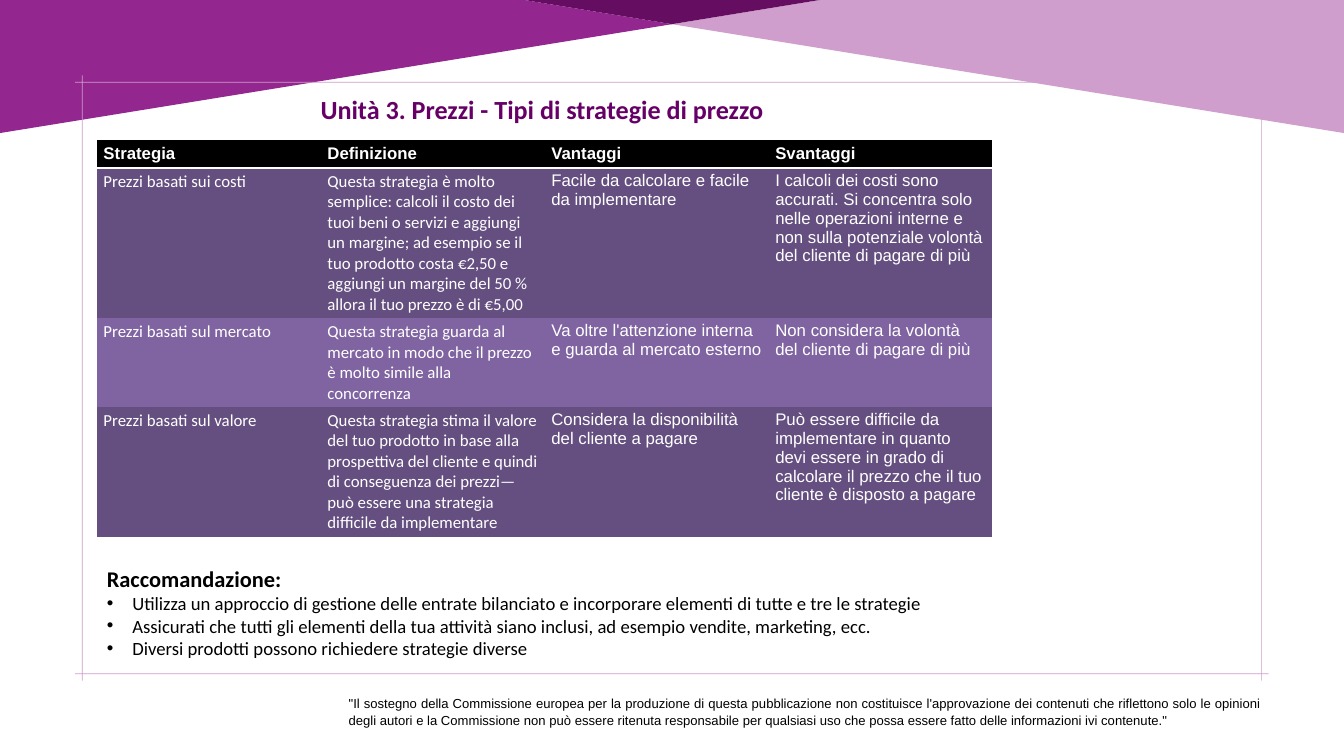
from lxml import etree
from pptx import Presentation
from pptx import util as u
from pptx.dml.color import RGBColor
from pptx.enum import shapes, text
from pptx.oxml import ns

PLUM = RGBColor(0x93, 0x26, 0x8F)
LILAC = RGBColor(0xCF, 0x9E, 0xCC)
DARK = RGBColor(0x64, 0x0D, 0x61)
TITLE = RGBColor(0x66, 0x00, 0x66)
ODD = RGBColor(0x65, 0x4F, 0x80)
EVEN = RGBColor(0x80, 0x64, 0xA2)
BLACK = RGBColor(0, 0, 0)
WHITE = RGBColor(255, 255, 255)

ROWS = [
    ("Strategia", "Definizione", "Vantaggi", "Svantaggi"),
    ("Prezzi basati sui costi",
     "Questa strategia è molto semplice: calcoli il costo dei tuoi beni o servizi "
     "e aggiungi un margine; ad esempio se il tuo prodotto costa €2,50 e aggiungi "
     "un margine del 50 % allora il tuo prezzo è di €5,00",
     "Facile da calcolare e facile da implementare",
     "I calcoli dei costi sono accurati. Si concentra solo nelle operazioni interne "
     "e non sulla potenziale volontà del cliente di pagare di più"),
    ("Prezzi basati sul mercato",
     "Questa strategia guarda al mercato in modo che il prezzo è molto simile "
     "alla concorrenza",
     "Va oltre l'attenzione interna e guarda al mercato esterno",
     "Non considera la volontà del cliente di pagare di più"),
    ("Prezzi basati sul valore",
     "Questa strategia stima il valore del tuo prodotto in base alla prospettiva "
     "del cliente e quindi di conseguenza dei prezzi— può essere una strategia "
     "difficile da implementare",
     "Considera la disponibilità del cliente a pagare",
     "Può essere difficile da implementare in quanto devi essere in grado di "
     "calcolare il prezzo che il tuo cliente è disposto a pagare"),
]
TIPS = [
    "Utilizza un approccio di gestione delle entrate bilanciato e incorporare "
    "elementi di tutte e tre le strategie",
    "Assicurati che tutti gli elementi della tua attività siano inclusi, "
    "ad esempio vendite, marketing, ecc.",
    "Diversi prodotti possono richiedere strategie diverse",
]
NOTE = (
    "\"Il sostegno della Commissione europea per la produzione di questa pubblicazione "
    "non costituisce l'approvazione dei contenuti che riflettono solo le opinioni degli "
    "autori e la Commissione non può essere ritenuta responsabile per qualsiasi uso che "
    "possa essere fatto delle informazioni ivi contenute.\""
)


class Deck:
    body, sans = "Calibri", "Arial"

    def __init__(self, wide, high):
        self.prs = Presentation()
        self.prs.slide_width, self.prs.slide_height = u.Inches(wide), u.Inches(high)
        self.slide = self.prs.slides.add_slide(self.prs.slide_layouts[5])

    def run(self, para, words, size, font, color, bold=False):
        run = para.add_run()
        run.text = words
        run.font.size, run.font.name, run.font.bold = u.Pt(size), font, bold
        run.font.color.rgb = color

    def title(self, words, *area):
        box = self.slide.shapes.title
        box.left, box.top, box.width, box.height = map(u.Inches, area)
        frame = box.text_frame
        frame.vertical_anchor = text.MSO_ANCHOR.TOP
        frame.auto_size = text.MSO_AUTO_SIZE.NONE
        para = frame.paragraphs[0]
        para.alignment = text.PP_ALIGN.LEFT
        self.run(para, words, 28, self.body, TITLE, True)

    def shape(self, color, points, hole=()):
        first, *rest = [(u.Inches(x), u.Inches(y)) for x, y in points]
        pen = self.slide.shapes.build_freeform(*first)
        pen.add_line_segments(rest)
        if hole:
            first, *rest = [(u.Inches(x), u.Inches(y)) for x, y in hole]
            pen.move_to(*first)
            pen.add_line_segments(rest)
        shape = pen.convert_to_shape()
        shape.shadow.inherit = False
        shape.fill.solid()
        shape.fill.fore_color.rgb = color
        shape.line.fill.background()

    def border(self, left, top, right, low, arm=0.1, thick=0.01):
        # One crossed corner, mirrored to all four, going clockwise
        end = arm + thick
        cross = [(arm, end), (0, end), (0, arm), (arm, arm),
                 (arm, 0), (end, 0), (end, arm)]
        turn = cross[::-1]
        rim = [(left + x, top + y) for x, y in cross]
        rim += [(right - x, top + y) for x, y in turn]
        rim += [(right - x, low - y) for x, y in cross]
        rim += [(left + x, low - y) for x, y in turn]
        hole = [(left + end, top + end), (left + end, low - end),
                (right - end, low - end), (right - end, top + end)]
        self.shape(LILAC, rim, hole)

    def box(self, *area):
        frame = self.slide.shapes.add_textbox(*map(u.Inches, area)).text_frame
        frame.word_wrap = True
        return frame

    def bullet(self, frame, words):
        para = frame.add_paragraph()
        props = para._p.get_or_add_pPr()
        props.set("marL", str(u.Inches(0.38)))
        props.set("indent", str(-u.Inches(0.38)))
        font = etree.SubElement(props, ns.qn("a:buFont"))
        font.set("typeface", self.sans)
        etree.SubElement(props, ns.qn("a:buChar")).set("char", "•")
        self.run(para, words, 20, self.body, BLACK)

    def rule(self, cell):
        props = cell._tc.get_or_add_tcPr()
        edge = etree.Element(ns.qn("a:lnB"), w=str(u.Pt(2)))
        fill = etree.SubElement(edge, ns.qn("a:solidFill"))
        etree.SubElement(fill, ns.qn("a:srgbClr")).set("val", str(WHITE))
        props.insert(0, edge)

    def table(self, rows, row, *area):
        holder = self.slide.shapes.add_table(
            len(rows), len(rows[0]), *map(u.Inches, area))
        grid = holder.table
        grid.horz_banding = False
        style = grid._tbl.tblPr.find(ns.qn("a:tableStyleId"))
        style.text = "{2D5ABB26-0587-4C30-8999-92F81FD0307C}"
        for i, cells in enumerate(rows):
            # Rows start at one line and grow with their text
            grid.rows[i].height = u.Inches(row)
            for j, words in enumerate(cells):
                cell = grid.cell(i, j)
                cell.fill.solid()
                cell.fill.fore_color.rgb = BLACK if i == 0 else ODD if i % 2 else EVEN
                font = self.body if i and j < 2 else self.sans
                self.run(cell.text_frame.paragraphs[0], words, 18, font, WHITE, i == 0)
                if i == 0:
                    self.rule(cell)
        holder.height = u.Inches(area[3])


def main():
    deck = Deck(20, 11.25)

    # Top wedges
    deck.shape(PLUM, [(0, 1.98), (0, 0), (7.8, 0), (10, 0.36)])
    deck.shape(LILAC, [(20, 1.98), (10, 0.36), (12.2, 0), (20, 0)])
    deck.shape(DARK, [(10, 0.36), (7.8, 0), (12.2, 0)])

    # Frame with crossed corners
    deck.border(1.12, 1.12, 18.88, 10.13)

    # Title and strategies
    deck.title("Unità 3. Prezzi - Tipi di strategie di prezzo", 4.67, 1.34, 7.22, 0.57)
    deck.table(ROWS, 0.41, 1.44, 2.09, 13.33, 6.11)

    # Advice
    frame = deck.box(1.49, 8.36, 15.92, 1.51)
    deck.run(frame.paragraphs[0], "Raccomandazione:", 24, deck.body, BLACK, True)
    for tip in TIPS:
        deck.bullet(frame, tip)

    # Disclaimer
    para = deck.box(5.08, 10.29, 13.79, 0.52).paragraphs[0]
    para.alignment, para.line_spacing = text.PP_ALIGN.JUSTIFY, 1.07
    para._p.get_or_add_pPr().set("marL", str(u.Inches(0.01)))
    deck.run(para, NOTE, 14, deck.sans, BLACK)

    deck.prs.save("out.pptx")


if __name__ == "__main__":
    main()
